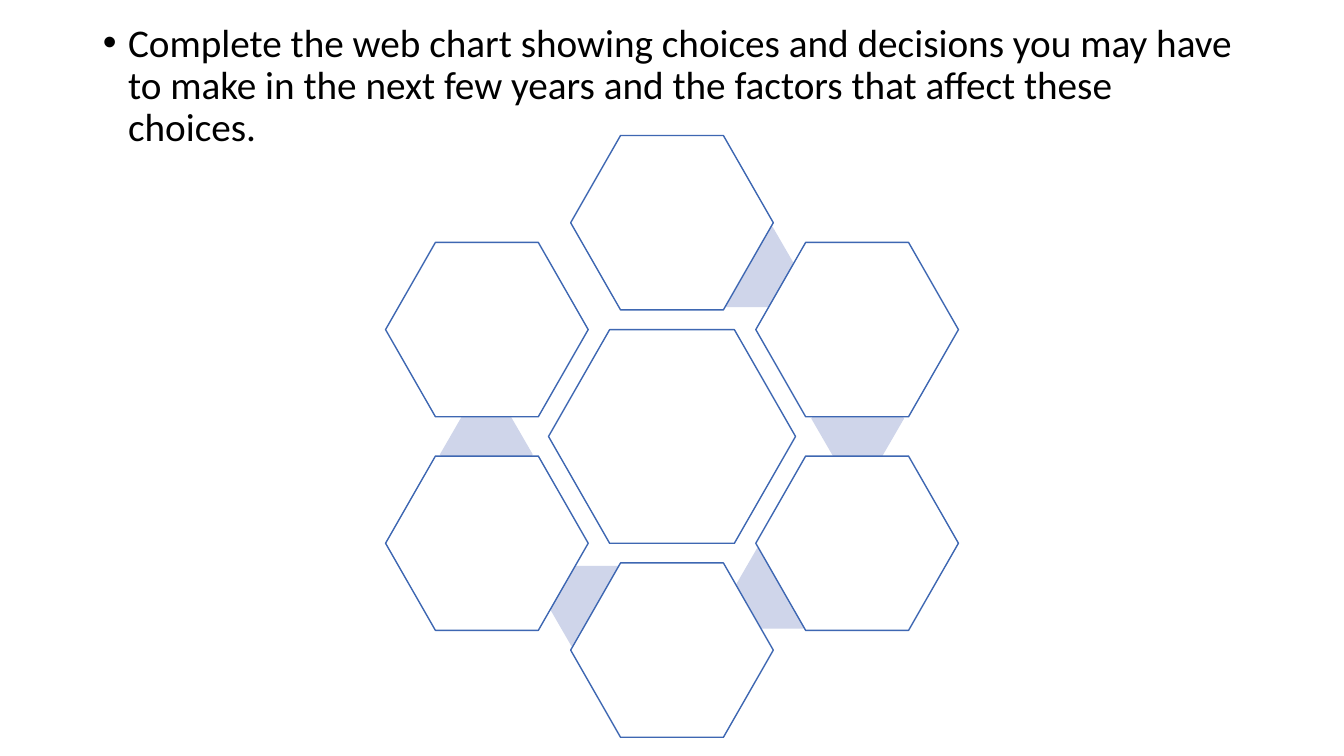
from dataclasses import dataclass
from math import cos, radians, sin

from pptx import Presentation
from pptx.dml.color import RGBColor
from pptx.enum.shapes import MSO_SHAPE as Shape
from pptx.enum.text import MSO_ANCHOR as Anchor, MSO_AUTO_SIZE as AutoSize, PP_ALIGN as Align
from pptx.util import Inches, Pt


@dataclass(frozen=True)
class Theme:
    font: str = "Calibri"
    text_size: int = 28
    text: str = "000000"
    cell: str = "FFFFFF"
    outline: str = "3E67B2"
    link: str = "CFD5EA"


theme = Theme()
slide_width, slide_height = 13.33, 7.5
web_x, web_y = slide_width / 2, 4.33
cell_distance, link_distance = 2.12, 1.85
cell_start, link_start, step = -90, -65.5, 60

presentation = Presentation()
presentation.slide_width = Inches(slide_width)
presentation.slide_height = Inches(slide_height)
slide = presentation.slides.add_slide(presentation.slide_layouts[1])


def write(frame, text, *, size, color, font):
    paragraph = frame.paragraphs[0]
    paragraph.text = text
    paragraph.alignment = Align.LEFT
    paragraph.line_spacing = 0.9
    paragraph.space_before = Pt(0)
    properties = paragraph._p.get_or_add_pPr()
    properties.set("marL", str(Inches(0.25)))
    properties.set("indent", str(Inches(-0.25)))
    run_font = paragraph.runs[0].font
    run_font.name, run_font.size = font, Pt(size)
    run_font.color.rgb = RGBColor.from_string(color)


def add_hexagon(angle, distance, width, height, fill, outline=None, inset=0.286):
    """Place a hexagon at an angle and distance from the middle of the web."""
    center_x = web_x + distance * cos(radians(angle))
    center_y = web_y + distance * sin(radians(angle))
    shape = slide.shapes.add_shape(
        Shape.HEXAGON, Inches(center_x - width / 2), Inches(center_y - height / 2),
        Inches(width), Inches(height))
    shape.adjustments[0] = inset
    shape.shadow.inherit = False
    shape.fill.solid()
    shape.fill.fore_color.rgb = RGBColor.from_string(fill)
    if outline:
        shape.line.color.rgb = RGBColor.from_string(outline)
        shape.line.width = Pt(1)
    else:
        shape.line.fill.background()


title = slide.shapes.title
title._element.getparent().remove(title._element)

task = slide.placeholders[1]
task.left, task.top = Inches(0.92), Inches(0.18)
task.width, task.height = Inches(11.5), Inches(4.76)
task.text_frame.word_wrap = True
task.text_frame.auto_size = AutoSize.NONE
task.text_frame.vertical_anchor = Anchor.TOP
write(task.text_frame,
      "Complete the web chart showing choices and decisions you may have to make "
      "in the next few years and the factors that affect these choices.",
      size=theme.text_size, color=theme.text, font=theme.font)

add_hexagon(0, 0, 2.45, 2.12, theme.cell, theme.outline)

# Each link sits behind the cells it joins, so all links come first
for index in range(5):
    add_hexagon(link_start + index * step, link_distance, 0.92, 0.8, theme.link, inset=0.289)
for index in range(6):
    add_hexagon(cell_start + index * step, cell_distance, 2.01, 1.73, theme.cell, theme.outline)

presentation.save("out.pptx")
